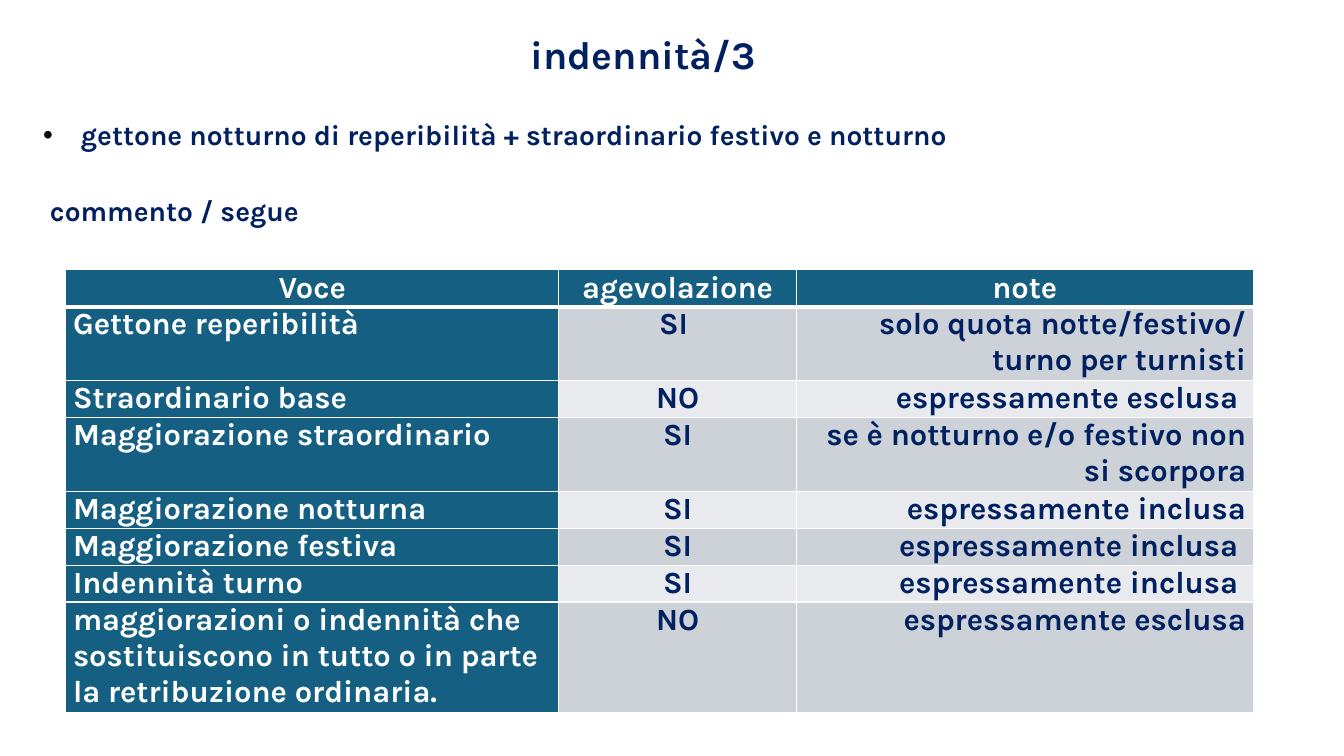
from lxml.etree import SubElement
from pptx import Presentation
from pptx.dml.color import RGBColor
from pptx.enum.text import MSO_ANCHOR, MSO_AUTO_SIZE, PP_ALIGN
from pptx.oxml import parse_xml
from pptx.oxml.ns import nsdecls, qn
from pptx.util import Cm, Pt

COLORS = {
    "navy": "002060", "white": "FFFFFF", "teal": "156082",
    "band_dark": "CCD2D8", "band_light": "E8EAED", "bullet": "0A0B09",
}
ROWS = [
    ("Voce", "agevolazione", "note"),
    ("Gettone reperibilità", "SI ", "solo quota notte/festivo/ turno per turnisti"),
    ("Straordinario base", "NO", "espressamente esclusa "),
    ("Maggiorazione straordinario", "SI", "se è notturno e/o festivo non si scorpora"),
    ("Maggiorazione notturna", "SI", "espressamente inclusa"),
    ("Maggiorazione festiva", "SI", "espressamente inclusa "),
    ("Indennità turno", "SI", "espressamente inclusa "),
    ("maggiorazioni o indennità che sostituiscono in tutto o in parte "
     "la retribuzione ordinaria.", "NO", "espressamente esclusa"),
]
LINES_PER_ROW = [1, 2, 1, 2, 1, 1, 1, 3]
LINE_HEIGHT = 0.93
COLUMN_WIDTHS = [12.42, 5.99, 11.51]
COLUMN_ALIGNMENTS = [PP_ALIGN.LEFT, PP_ALIGN.CENTER, PP_ALIGN.RIGHT]


class SlideBuilder:
    font_name = "Karla"

    def __init__(self, presentation):
        self.slide = presentation.slides.add_slide(presentation.slide_layouts[5])

    def format_paragraph(self, paragraph, size, color, alignment):
        paragraph.alignment = alignment
        for run in paragraph.runs:
            run.font.name = self.font_name
            run.font.size = Pt(size)
            run.font.bold = True
            run.font.color.rgb = RGBColor.from_string(COLORS[color])

    def prepare_frame(self, text_frame):
        text_frame.word_wrap = True
        text_frame.auto_size = MSO_AUTO_SIZE.NONE
        text_frame.vertical_anchor = MSO_ANCHOR.TOP

    def title(self, text, left, top, width, height):
        shape = self.slide.shapes.title
        shape.left, shape.top = Cm(left), Cm(top)
        shape.width, shape.height = Cm(width), Cm(height)
        self.prepare_frame(shape.text_frame)
        shape.text_frame.text = text
        self.format_paragraph(shape.text_frame.paragraphs[0], 28, "navy", PP_ALIGN.CENTER)

    def body(self, bullet_text, comment, left, top, width, height):
        shape = self.slide.shapes.add_textbox(Cm(left), Cm(top), Cm(width), Cm(height))
        text_frame = shape.text_frame
        self.prepare_frame(text_frame)
        text_frame.text = f"{bullet_text}\n{comment}"
        first, second = text_frame.paragraphs
        self.add_bullet(first)
        first.space_after = Pt(30)
        second._p.get_or_add_pPr().set("marL", str(Cm(0.17)))
        for paragraph in text_frame.paragraphs:
            self.format_paragraph(paragraph, 20, "navy", PP_ALIGN.JUSTIFY)

    def add_bullet(self, paragraph):
        properties = paragraph._p.get_or_add_pPr()
        properties.set("marL", str(Cm(0.95)))
        properties.set("indent", str(Cm(-0.95)))
        color = SubElement(properties, qn("a:buClr"))
        SubElement(color, qn("a:srgbClr"), val=COLORS["bullet"])
        SubElement(properties, qn("a:buFont"), typeface="Arial")
        SubElement(properties, qn("a:buChar"), char="•")

    def table(self, rows, left, top):
        heights = [LINE_HEIGHT * lines for lines in LINES_PER_ROW]
        frame = self.slide.shapes.add_table(
            len(rows), len(COLUMN_WIDTHS), Cm(left), Cm(top),
            Cm(sum(COLUMN_WIDTHS)), Cm(sum(heights)))
        table = frame.table
        for column, width in zip(table.columns, COLUMN_WIDTHS):
            column.width = Cm(width)
        for row, height in zip(table.rows, heights):
            row.height = Cm(height)
        for row_index, texts in enumerate(rows):
            for column_index, text in enumerate(texts):
                self.cell(table.cell(row_index, column_index), text, row_index, column_index)

    def cell(self, cell, text, row_index, column_index):
        is_heading = row_index == 0 or column_index == 0
        fill = "teal" if is_heading else ("band_light", "band_dark")[row_index % 2]
        alignment = PP_ALIGN.CENTER if row_index == 0 else COLUMN_ALIGNMENTS[column_index]
        cell.margin_left = cell.margin_right = Cm(0.18)
        cell.margin_top = cell.margin_bottom = 0
        cell.fill.solid()
        cell.fill.fore_color.rgb = RGBColor.from_string(COLORS[fill])
        cell.text_frame.text = text
        self.format_paragraph(cell.text_frame.paragraphs[0], 22,
                              "white" if is_heading else "navy", alignment)
        # The rule under the header row is thicker
        self.borders(cell, top=3 if row_index == 1 else 1, bottom=3 if row_index == 0 else 1)

    def borders(self, cell, top, bottom):
        properties = cell._tc.get_or_add_tcPr()
        widths = {"lnL": 1, "lnR": 1, "lnT": top, "lnB": bottom}
        for position, (tag, width) in enumerate(widths.items()):
            properties.insert(position, parse_xml(
                f'<a:{tag} {nsdecls("a")} w="{Pt(width)}"><a:solidFill>'
                f'<a:srgbClr val="{COLORS["white"]}"/></a:solidFill></a:{tag}>'))


def main():
    presentation = Presentation()
    presentation.slide_width, presentation.slide_height = Cm(33.87), Cm(19.05)
    builder = SlideBuilder(presentation)

    # Heading and introduction
    builder.title("indennità/3", 0.84, 0.64, 30.73, 1.5)
    builder.body("gettone notturno di reperibilità + straordinario festivo e notturno",
                 "commento / segue", 0.84, 2.84, 30.73, 3.2)

    # Table of allowances
    builder.table(ROWS, 1.66, 6.8)

    presentation.save("out.pptx")


if __name__ == "__main__":
    main()
